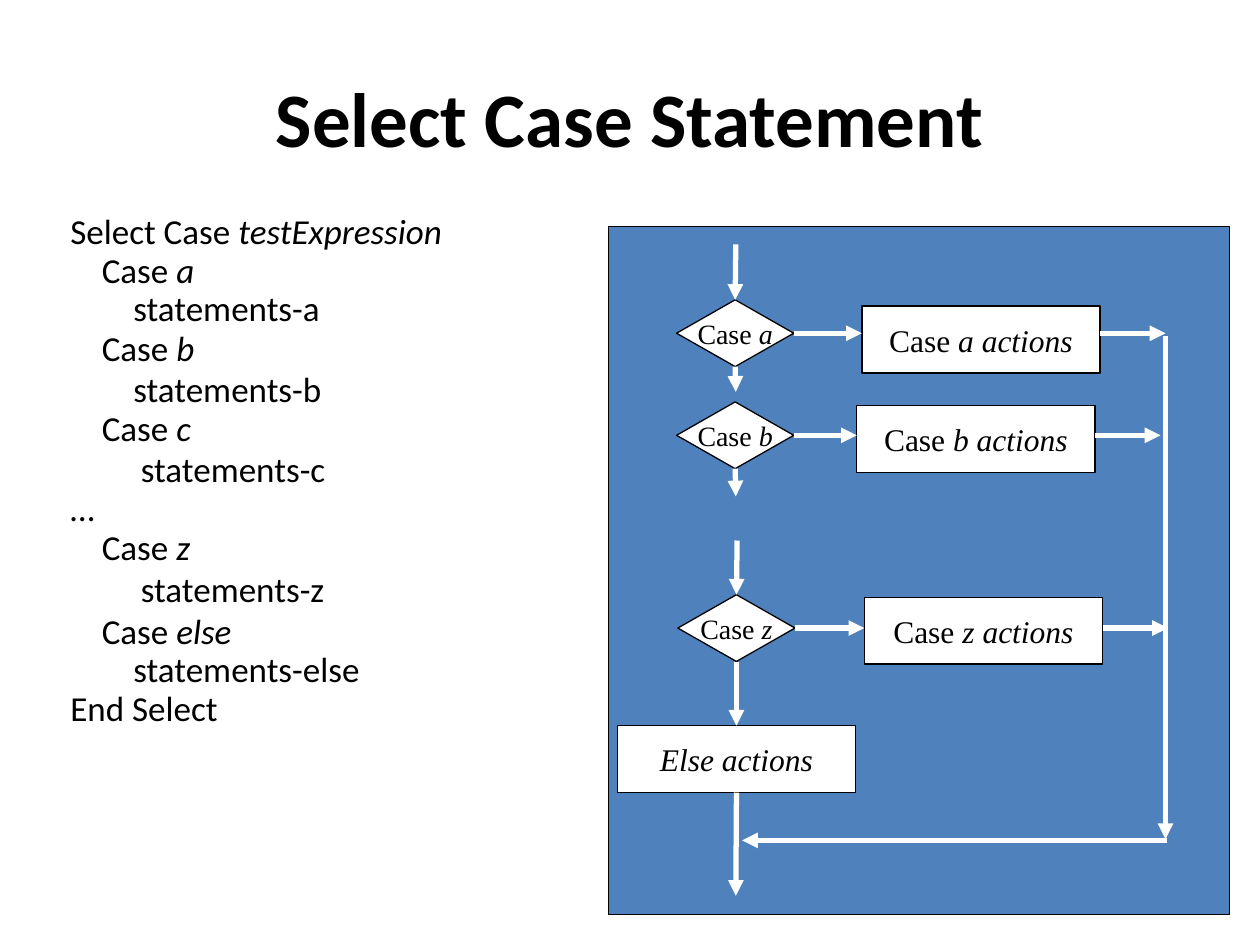
"""Build the Select Case Statement slide with its code outline and flowchart."""
from dataclasses import dataclass
from typing import Optional

from lxml.etree import SubElement
from pptx import Presentation
from pptx.dml.color import RGBColor
from pptx.enum.shapes import MSO_CONNECTOR, MSO_SHAPE
from pptx.enum.text import MSO_ANCHOR, PP_ALIGN
from pptx.oxml.ns import qn
from pptx.util import Inches, Pt

BLACK, WHITE, BLUE = "000000", "FFFFFF", "4F81BD"
TOP, BOTTOM, RIGHT = 0, 2, 3
DIAMOND_WIDTH, ACTION_WIDTH, NODE_HEIGHT = 0.93, 1.89, 0.53


@dataclass
class CodeLine:
    plain: str
    italic: str = ""
    indent: float = 0
    tight: bool = True


@dataclass
class CaseRow:
    letter: str
    diamond_left: float
    diamond_top: float
    action_left: float
    action_top: float


CODE_LINES = [
    CodeLine("Select Case ", "testExpression"),
    CodeLine("Case ", "a", 0.25),
    CodeLine("statements-a", indent=0.5),
    CodeLine("Case ", "b", 0.25, tight=False),
    CodeLine("statements-b", indent=0.5),
    CodeLine("Case ", "c", 0.25, tight=False),
    CodeLine("statements-c", indent=0.56),
    CodeLine("…"),
    CodeLine("Case ", "z", 0.25, tight=False),
    CodeLine("statements-z", indent=0.56, tight=False),
    CodeLine("Case ", "else", 0.25),
    CodeLine("statements-else", indent=0.5),
    CodeLine("End Select"),
]
CASE_ROWS = [
    CaseRow("a", 5.37, 2.38, 6.84, 2.43),
    CaseRow("b", 5.37, 3.19, 6.8, 3.22),
    CaseRow("z", 5.38, 4.72, 6.86, 4.74),
]


def color(value: str) -> RGBColor:
    return RGBColor.from_string(value)


def add_run(paragraph, text: str, name: str, size: float, **extra) -> None:
    if not text:
        return
    run = paragraph.add_run()
    run.text = text
    run.font.color.rgb = color(BLACK)
    for attribute, value in {"name": name, "size": Pt(size), **extra}.items():
        setattr(run.font, attribute, value)


def add_title(slide, text: str) -> None:
    title = slide.shapes.title
    place = {"left": 0.5, "top": 0.3, "width": 9, "height": 1.25}
    for attribute, value in place.items():
        setattr(title, attribute, Inches(value))
    title.text_frame.vertical_anchor = MSO_ANCHOR.MIDDLE
    paragraph = title.text_frame.paragraphs[0]
    paragraph.alignment = PP_ALIGN.CENTER
    add_run(paragraph, text, "Calibri", 44, bold=True)


def add_code(slide, lines: list[CodeLine]) -> None:
    box = slide.shapes.add_textbox(Inches(0.46), Inches(1.76), Inches(4), Inches(4.68))
    frame = box.text_frame
    frame.word_wrap = True
    for index, line in enumerate(lines):
        paragraph = frame.add_paragraph() if index else frame.paragraphs[0]
        paragraph._p.get_or_add_pPr().set("marL", str(Inches(line.indent)))
        if line.tight:
            paragraph.line_spacing = 0.5
            paragraph.space_before = Pt(10)
        add_run(paragraph, line.plain, "Calibri", 20)
        add_run(paragraph, line.italic, "Calibri", 20, italic=True)


def add_box(slide, kind, left: float, top: float, width: float, height: float, fill: str):
    shape = slide.shapes.add_shape(
        kind, Inches(left), Inches(top), Inches(width), Inches(height)
    )
    shape.shadow.inherit = False
    shape.fill.solid()
    shape.fill.fore_color.rgb = color(fill)
    shape.line.color.rgb = color(BLACK)
    shape.line.width = Pt(0.75)
    return shape


def add_node(slide, kind, left: float, top: float, width: float,
             plain: str, italic: str, size: float):
    shape = add_box(slide, kind, left, top, width, NODE_HEIGHT, WHITE)
    frame = shape.text_frame
    frame.word_wrap = False
    frame.vertical_anchor = MSO_ANCHOR.MIDDLE
    paragraph = frame.paragraphs[0]
    paragraph.alignment = PP_ALIGN.CENTER
    add_run(paragraph, plain, "Times New Roman", size)
    add_run(paragraph, italic, "Times New Roman", size, italic=True)
    return shape


def add_arrow(slide, start: tuple[float, float], end: tuple[float, float],
              begin_at: Optional[tuple] = None, end_at: Optional[tuple] = None) -> None:
    points = [Inches(value) for value in (*start, *end)]
    arrow = slide.shapes.add_connector(MSO_CONNECTOR.STRAIGHT, *points)
    arrow.line.color.rgb = color(WHITE)
    arrow.line.width = Pt(3)
    SubElement(arrow.line._get_or_add_ln(), qn("a:tailEnd"), type="triangle")
    SubElement(arrow._element.spPr, qn("a:effectLst"))
    if begin_at:
        arrow.begin_connect(*begin_at)
    if end_at:
        arrow.end_connect(*end_at)


def add_case(slide, row: CaseRow):
    diamond = add_node(slide, MSO_SHAPE.FLOWCHART_DECISION, row.diamond_left,
                       row.diamond_top, DIAMOND_WIDTH, "Case ", row.letter, 16)
    add_node(slide, MSO_SHAPE.FLOWCHART_PROCESS, row.action_left, row.action_top,
             ACTION_WIDTH, "Case ", f"{row.letter} actions", 18)
    middle = row.diamond_top + NODE_HEIGHT / 2
    action_right = row.action_left + ACTION_WIDTH
    add_arrow(slide, (row.diamond_left + DIAMOND_WIDTH, middle),
              (row.action_left, middle), begin_at=(diamond, RIGHT))
    add_arrow(slide, (action_right, middle), (action_right + 0.52, middle))
    return diamond


def add_flowchart(slide) -> None:
    add_box(slide, MSO_SHAPE.RECTANGLE, 4.83, 1.8, 4.93, 5.46, BLUE)
    case_a, case_b, case_z = [add_case(slide, row) for row in CASE_ROWS]
    else_actions = add_node(slide, MSO_SHAPE.FLOWCHART_PROCESS, 4.9, 5.76,
                            ACTION_WIDTH, "", "Else actions", 18)
    add_arrow(slide, (5.84, 1.94), (5.84, 2.38), end_at=(case_a, TOP))
    add_arrow(slide, (5.84, 2.91), (5.84, 3.11), begin_at=(case_a, BOTTOM))
    add_arrow(slide, (5.84, 3.72), (5.84, 3.94), begin_at=(case_b, BOTTOM))
    add_arrow(slide, (5.85, 4.29), (5.85, 4.72), end_at=(case_z, TOP))
    add_arrow(slide, (5.85, 5.25), (5.85, 5.76), (case_z, BOTTOM), (else_actions, TOP))
    add_arrow(slide, (5.84, 6.29), (5.84, 7.11), begin_at=(else_actions, BOTTOM))
    add_arrow(slide, (9.25, 2.67), (9.25, 6.66))
    add_arrow(slide, (9.26, 6.67), (5.89, 6.67))


def main() -> None:
    presentation = Presentation()
    presentation.slide_width = Inches(10)
    presentation.slide_height = Inches(7.5)
    slide = presentation.slides.add_slide(presentation.slide_layouts[5])
    add_title(slide, "Select Case Statement")
    add_code(slide, CODE_LINES)
    add_flowchart(slide)
    presentation.save("out.pptx")


if __name__ == "__main__":
    main()
